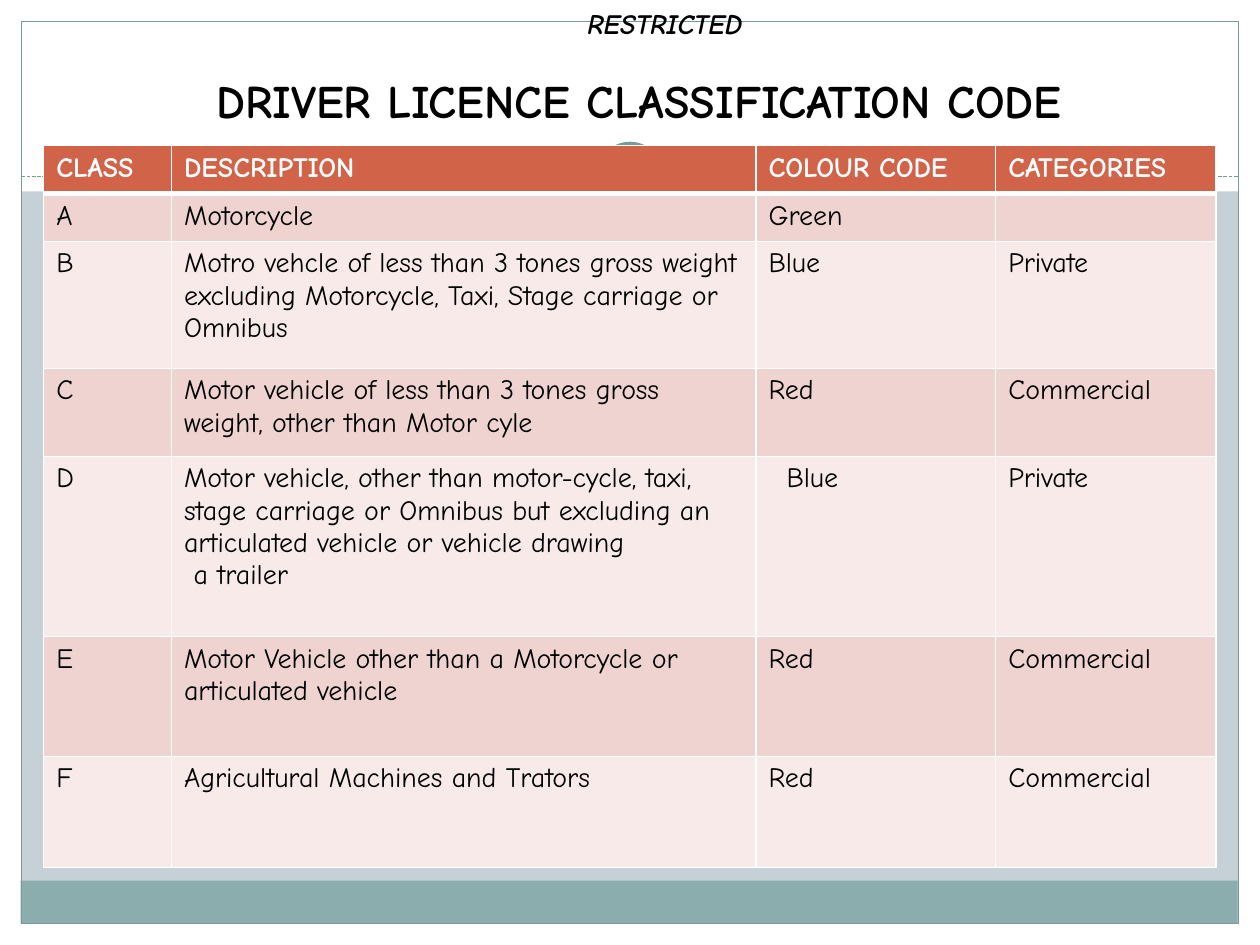
from dataclasses import dataclass

from lxml.etree import SubElement
from pptx import Presentation
from pptx.dml.color import RGBColor
from pptx.enum.dml import MSO_LINE
from pptx.enum.shapes import MSO_CONNECTOR, MSO_SHAPE
from pptx.enum.text import MSO_ANCHOR, PP_ALIGN
from pptx.oxml import parse_xml
from pptx.oxml.ns import nsdecls, qn
from pptx.util import Pt


@dataclass(frozen=True)
class Theme:
    font: str = "Comic Neue"
    title_size: float = 26.6
    text_size: float = 16
    back: str = "C5D1D7"
    white: str = "FFFFFF"
    black: str = "000000"
    line: str = "7C999A"
    footer: str = "8CADAE"
    header: str = "D16349"
    bands: tuple = ("EED3D0", "F7EAE9")


def write(tf, text, theme, size=None, color=None, bold=False, italic=False,
          align=None, before=None, last_indent=0):
    """Write each line of text as a paragraph of the text frame."""
    size = size or theme.text_size
    for i, line in enumerate(text.split("\n")):
        p = tf.add_paragraph() if i else tf.paragraphs[0]
        p.alignment = align
        if before is not None:
            p.space_before = Pt(before)
        if not line:
            p._p.get_or_add_endParaRPr().set("sz", str(round(size * 100)))
            continue
        r = p.add_run()
        r.text = line
        r.font.name, r.font.size = theme.font, Pt(size)
        r.font.bold, r.font.italic = bold, italic
        r.font.color.rgb = RGBColor.from_string(color or theme.black)
    if last_indent:
        p._p.get_or_add_pPr().set("marL", str(Pt(last_indent)))


class SlideBuilder:
    def __init__(self, s, theme):
        self.s, self.theme = s, theme

    def background(self, color):
        fill = self.s.background.fill
        fill.solid()
        fill.fore_color.rgb = RGBColor.from_string(color)

    def shape(self, x, y, w, h, fill=None, line=None, width=0.75,
              kind=MSO_SHAPE.RECTANGLE):
        sp = self.s.shapes.add_shape(kind, Pt(x), Pt(y), Pt(w), Pt(h))
        sp.shadow.inherit = False
        if fill:
            sp.fill.solid()
            sp.fill.fore_color.rgb = RGBColor.from_string(fill)
        else:
            sp.fill.background()
        if line:
            sp.line.color.rgb = RGBColor.from_string(line)
            sp.line.width = Pt(width)
        else:
            sp.line.fill.background()

    def circle(self, cx, cy, d, **style):
        self.shape(cx - d / 2, cy - d / 2, d, d, kind=MSO_SHAPE.OVAL, **style)

    def dashed_line(self, x1, y1, x2, y2):
        c = self.s.shapes.add_connector(
            MSO_CONNECTOR.STRAIGHT, Pt(x1), Pt(y1), Pt(x2), Pt(y2))
        c.line.color.rgb = RGBColor.from_string(self.theme.line)
        c.line.width = Pt(0.75)
        c.line.dash_style = MSO_LINE.SQUARE_DOT
        SubElement(c._element.spPr, qn("a:effectLst"))

    def text(self, x, y, w, h, text, anchor=MSO_ANCHOR.TOP, left=7.2,
             bottom=3.6, **fmt):
        tf = self.s.shapes.add_textbox(Pt(x), Pt(y), Pt(w), Pt(h)).text_frame
        tf.word_wrap = True
        tf.vertical_anchor = anchor
        tf.margin_left, tf.margin_bottom = Pt(left), Pt(bottom)
        write(tf, text, self.theme, **fmt)

    def borders(self, cell, top, bottom):
        widths = {"lnL": 1, "lnR": 1, "lnT": top, "lnB": bottom}
        tcPr = cell._tc.get_or_add_tcPr()
        for i, (tag, width) in enumerate(widths.items()):
            tcPr.insert(i, parse_xml(
                f'<a:{tag} {nsdecls("a")} w="{Pt(width)}"><a:solidFill>'
                f'<a:srgbClr val="{self.theme.white}"/></a:solidFill></a:{tag}>'))

    def table(self, x, y, widths, heights, rows, cell_left, last_indents):
        t = self.theme
        table = self.s.shapes.add_table(
            len(rows), len(widths), Pt(x), Pt(y),
            Pt(sum(widths)), Pt(sum(heights))).table
        for col, w in zip(table.columns, widths):
            col.width = Pt(w)
        for i, (row, h) in enumerate(zip(rows, heights)):
            table.rows[i].height = Pt(h)
            head = i == 0
            fill = t.header if head else t.bands[(i - 1) % 2]
            for j, text in enumerate(row):
                cell = table.cell(i, j)
                cell.fill.solid()
                cell.fill.fore_color.rgb = RGBColor.from_string(fill)
                cell.margin_left = Pt(cell_left.get((i, j), 7.2))
                self.borders(cell, 3 if i == 1 else 1, 3 if head else 1)
                write(cell.text_frame, text, t, bold=head,
                      color=t.white if head else t.black,
                      last_indent=last_indents.get((i, j), 0))


LICENCE_ROWS = [
    ("CLASS", "DESCRIPTION", "COLOUR CODE", "CATEGORIES"),
    ("A", "Motorcycle", "Green", ""),
    ("B", "Motro vehcle of less than 3 tones gross weight excluding "
          "Motorcycle, Taxi, Stage carriage or Omnibus", "Blue", "Private"),
    ("C", "Motor vehicle of less than 3 tones gross weight, other than "
          "Motor cyle", "Red", "Commercial"),
    ("D", "Motor vehicle, other than motor-cycle, taxi, stage carriage or "
          "Omnibus but excluding an articulated vehicle or vehicle drawing\n"
          "a trailer", "Blue", "Private"),
    ("E", "Motor Vehicle other than a Motorcycle or articulated vehicle",
     "Red", "Commercial"),
    ("F", "Agricultural Machines and Trators", "Red", "Commercial"),
]


def main():
    theme = Theme()
    prs = Presentation()
    width, height, edge = 720, 540, 12.24
    prs.slide_width, prs.slide_height = Pt(width), Pt(height)
    b = SlideBuilder(prs.slides.add_slide(prs.slide_layouts[6]), theme)
    inner_w, inner_h = width - 2 * edge, height - 2 * edge

    # White margins, footer band and frame
    b.background(theme.back)
    b.shape(0, height - edge, width, edge, fill=theme.white)
    b.shape(0, 0, width, 109.44, fill=theme.white)
    for x in (0, width - edge):
        b.shape(x, 0, edge, height, fill=theme.white)
    b.shape(11.75, 503.3, inner_w, 24.5, fill=theme.footer)
    b.shape(edge, edge, inner_w, inner_h, line=theme.line)

    # Divider with its ring
    b.dashed_line(edge, 100.8, width - edge, 100.8)
    b.circle(360, 99.5, 48, fill=theme.white)
    b.circle(360, 99.5, 33, fill=theme.white, line=theme.line, width=4)

    # Title
    b.text(24, 18, 672, 60, "DRIVER LICENCE CLASSIFICATION CODE",
           anchor=MSO_ANCHOR.BOTTOM, left=18, bottom=5, bold=True,
           size=theme.title_size, align=PP_ALIGN.CENTER)

    # Licence classes
    b.table(25, 83.2, [73, 334, 137, 126],
            [27.4, 27.4, 72.6, 50.3, 102.9, 68.5, 63.4], LICENCE_ROWS,
            cell_left={(4, 2): 17.5}, last_indents={(4, 1): 5.5})

    # Security marking
    b.text(51, 0, 658, 45, "RESTRICTED", bold=True, italic=True,
           align=PP_ALIGN.CENTER, before=3.2)

    prs.save("out.pptx")


if __name__ == "__main__":
    main()
